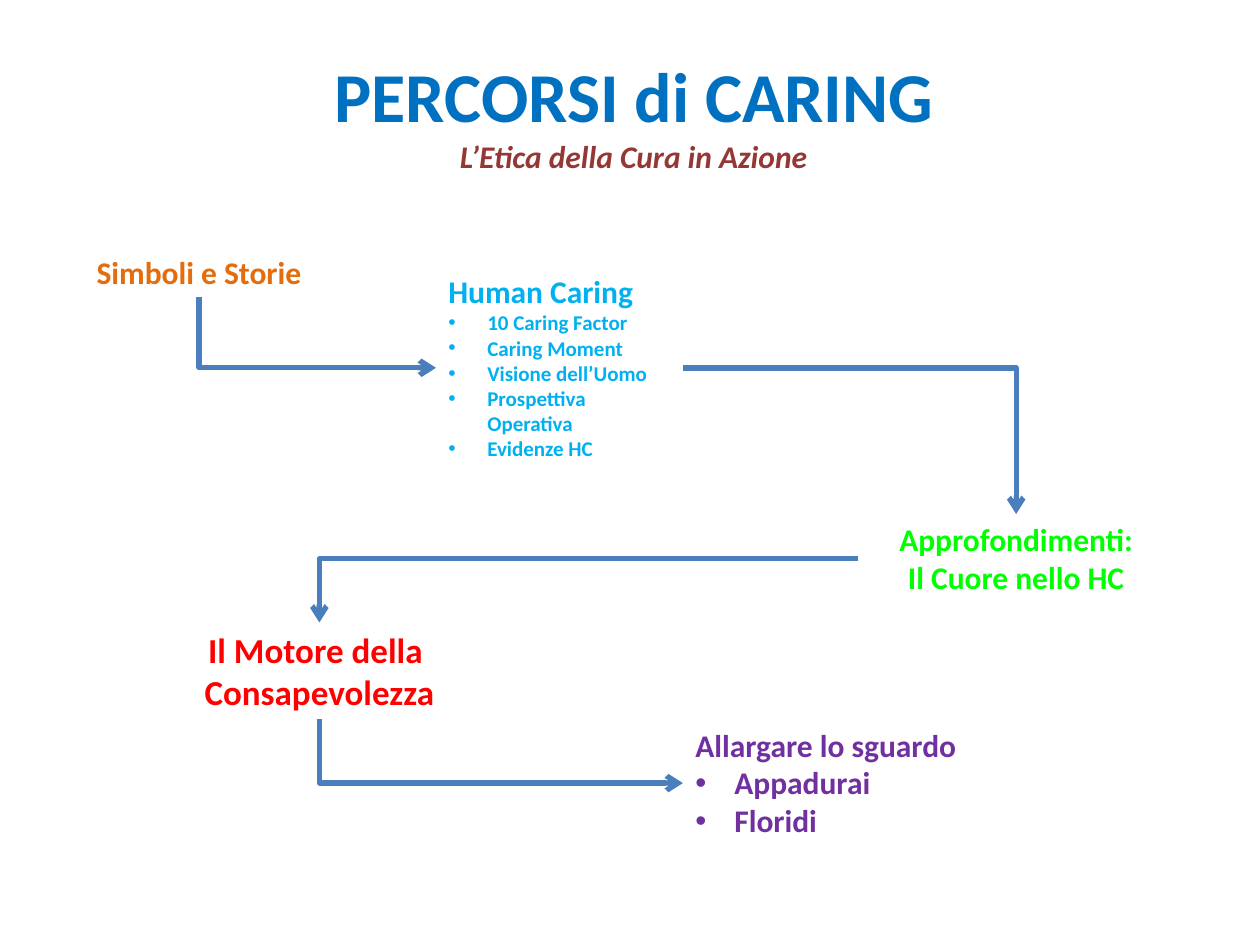
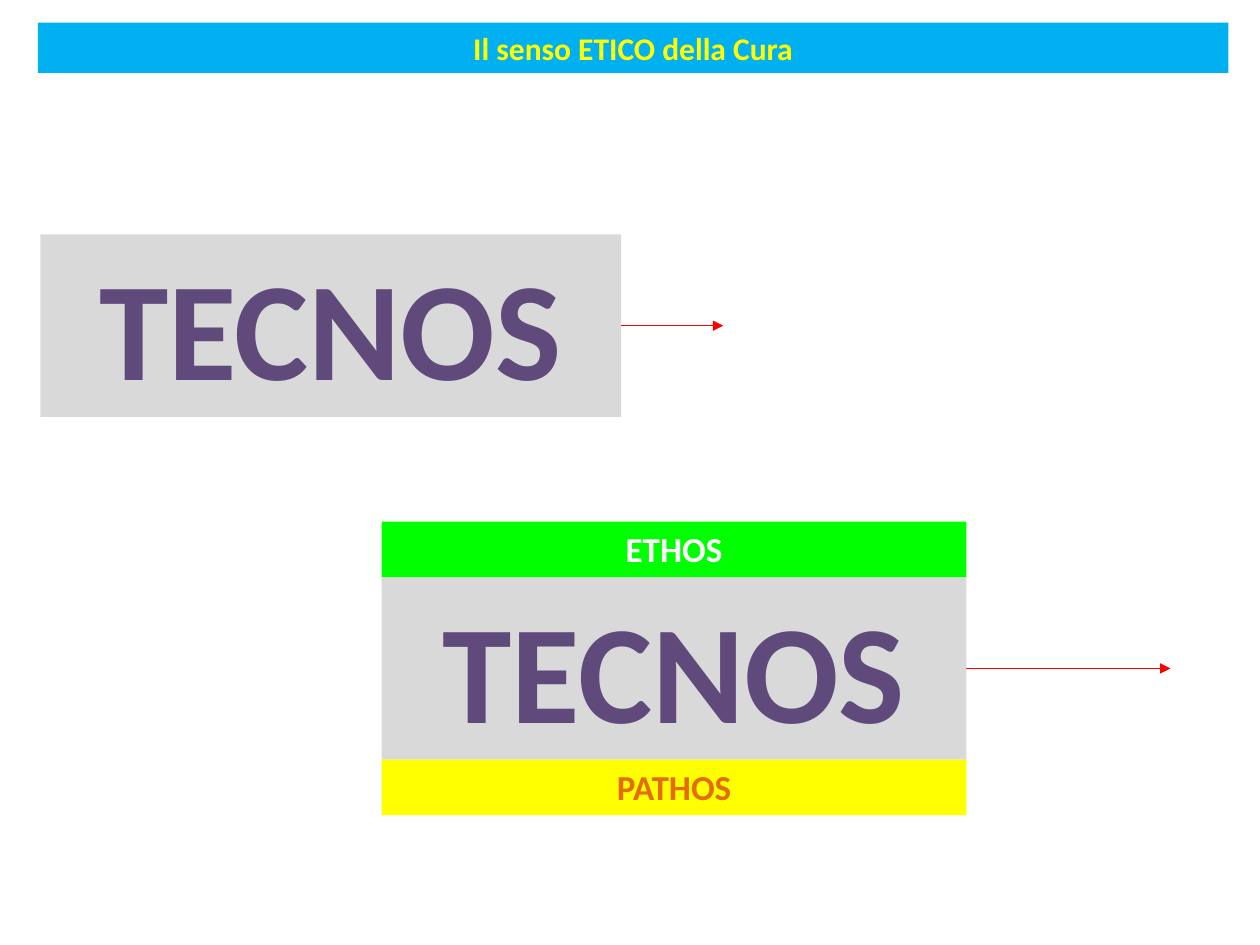
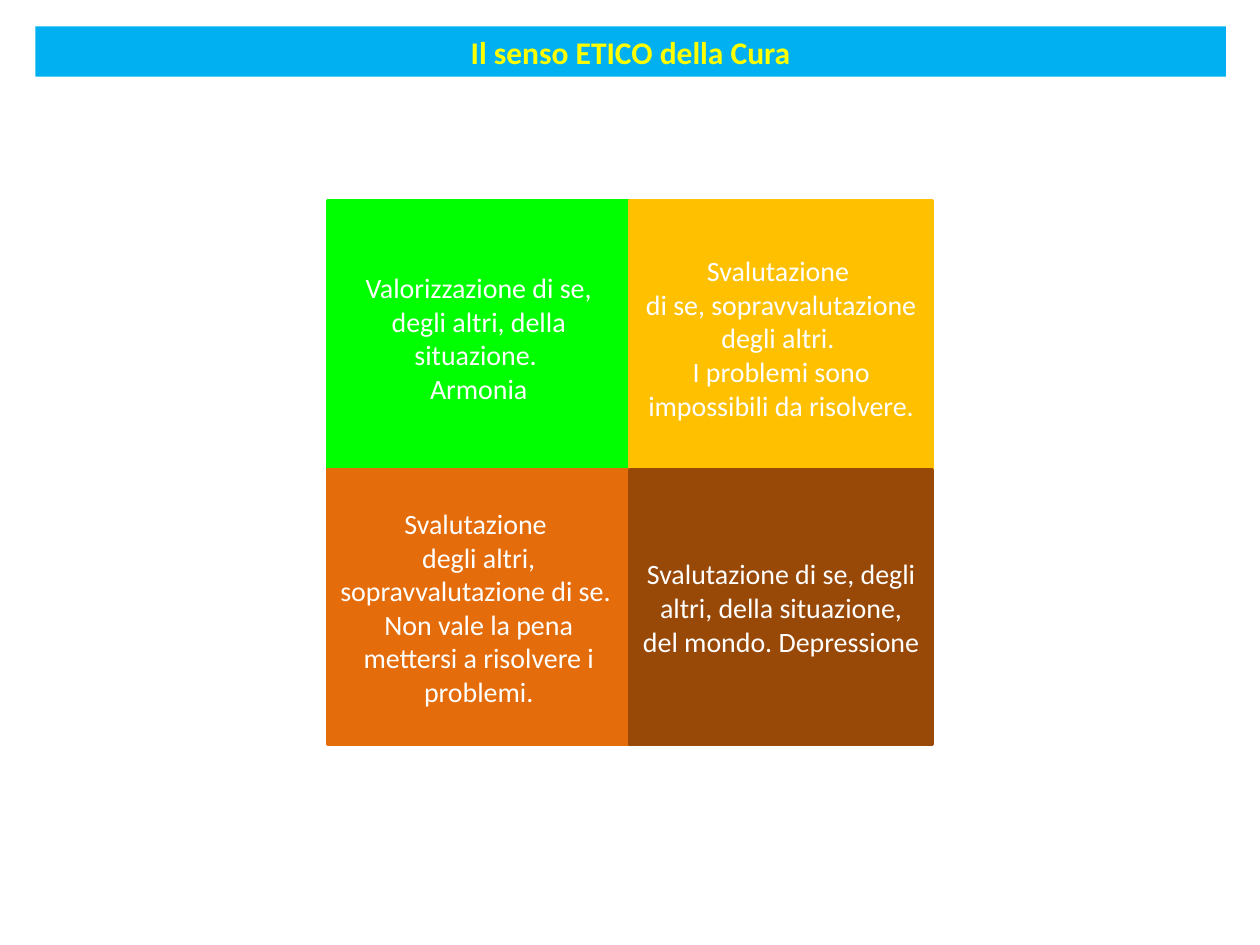
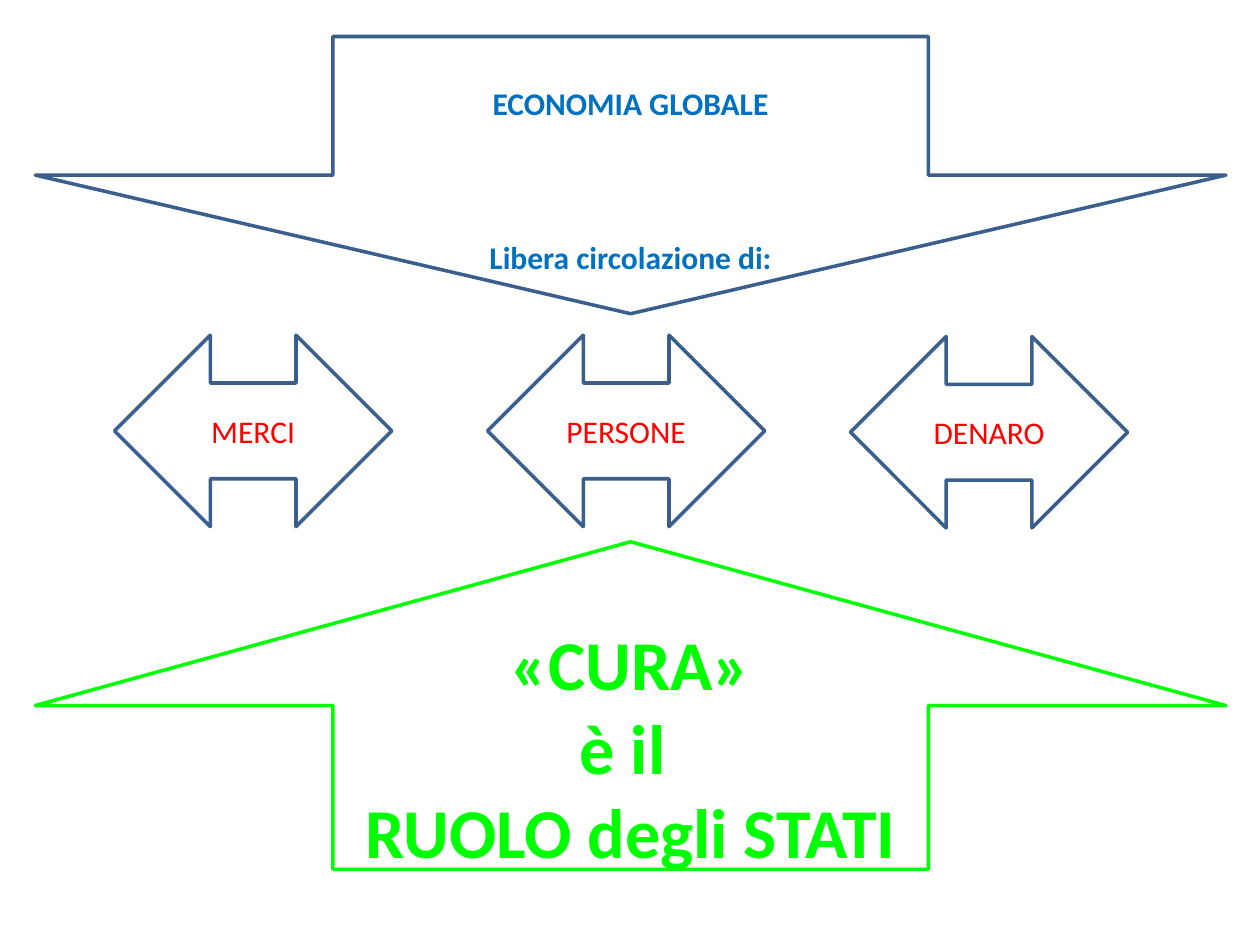
from lxml import etree
from pptx import Presentation
from pptx.dml.color import RGBColor
from pptx.enum.shapes import MSO_CONNECTOR, MSO_SHAPE
from pptx.enum.text import MSO_ANCHOR, MSO_AUTO_SIZE, PP_ALIGN
from pptx.oxml.ns import qn
from pptx.util import Inches, Pt

WIDTH, HEIGHT = 10, 7.5
FONT = "Calibri"
BLUE, SKY, GREEN, ORANGE = "0070C0", "00B0F0", "00FF00", "E46C0A"
RED, YELLOW, WHITE, GREY = "FF0000", "FFFF00", "FFFFFF", "D9D9D9"
PURPLE, VIOLET, MAROON, AMBER = "7030A0", "604A7B", "953735", "FFC000"
BROWN, STEEL, NAVY = "984807", "4B7EBC", "3A5F8C"
BULLET_INDENT = 0.31

LEFT, CENTER = PP_ALIGN.LEFT, PP_ALIGN.CENTER
TOP, MIDDLE = MSO_ANCHOR.TOP, MSO_ANCHOR.MIDDLE
RECTANGLE, EXCHANGE = MSO_SHAPE.RECTANGLE, MSO_SHAPE.LEFT_RIGHT_ARROW
DOWN_ARROW, UP_ARROW = MSO_SHAPE.DOWN_ARROW, MSO_SHAPE.UP_ARROW
STRAIGHT, ELBOW = MSO_CONNECTOR.STRAIGHT, MSO_CONNECTOR.ELBOW
SITE_TOP, SITE_LEFT, SITE_BOTTOM, SITE_RIGHT = range(4)

# A line is plain text, or text with what differs from the rest of its box.
TITLE_AT = (2.53, 0.37, 5, 1.08)
TITLE = ["PERCORSI di CARING",
         ("L’Etica della Cura in Azione", {"size": 18, "color": MAROON, "italic": True})]


def bulleted(texts, **changes):
    return [(text, {"bullet": True, **changes}) for text in texts]


# Steps of the path: place, colour, size, alignment, lines
STEPS = [
    ((0.63, 1.96, 1.9, 0.4), ORANGE, 18, CENTER, ["Simboli e Storie"]),
    ((3.46, 2.11, 1.96, 1.62), SKY, 18, LEFT, ["Human Caring"] + bulleted(
        ["10 Caring Factor", "Caring Moment", "Visione dell’Uomo",
         "Prospettiva Operativa", "Evidenze HC"], size=12)),
    ((6.81, 4.08, 2.51, 0.71), GREEN, 18, CENTER,
     ["Approfondimenti:", "Il Cuore nello HC"]),
    ((0.63, 4.94, 3.81, 0.77), RED, 20, CENTER,
     ["Il Motore della ", "Consapevolezza"]),
    ((5.42, 5.71, 2.38, 1.01), PURPLE, 18, LEFT,
     ["Allargare lo sguardo"] + bulleted(["Appadurai", "Floridi"])),
]
# Sides where each link leaves one step and reaches the next
LINK_SITES = [(SITE_BOTTOM, SITE_LEFT), (SITE_RIGHT, SITE_TOP),
              (SITE_LEFT, SITE_TOP), (SITE_BOTTOM, SITE_LEFT)]

BAND_TEXT = "Il senso ETICO della Cura"
BAND_SIZE = (9.45, 0.4)
TECNOS_HEIGHT, STRIP_HEIGHT = 1.45, 0.44
# Left, top, width, arrow length, strips above and below (text, fill, colour)
TECNOS_BLOCKS = [
    (3.03, 4.58, 4.64, 1.62, [("ETHOS", GREEN, WHITE), ("PATHOS", YELLOW, ORANGE)]),
    (0.32, 1.86, 4.61, 0.81, []),
]

QUADRANT_ORIGIN, QUADRANT_STEP, QUADRANT_SIZE = (2.6, 1.59), (2.4, 2.14), (2.4, 2.18)
QUADRANTS = [
    (GREEN, ["Valorizzazione di se, degli altri, della situazione. ", "Armonia"]),
    (AMBER, ["Svalutazione ", "di se, sopravvalutazione degli altri. ",
             "I problemi sono impossibili da risolvere."]),
    (ORANGE, ["Svalutazione ", "degli altri, sopravvalutazione di se. ",
              "Non vale la pena mettersi a risolvere i problemi."]),
    (BROWN, ["Svalutazione di se, degli altri, della situazione, "
             "del mondo. Depressione"]),
]

FLOW_SIZE = (2.2, 1.52)
FLOWS = [("MERCI", 0.91, 2.66), ("PERSONE", 3.87, 2.66), ("DENARO", 6.75, 2.67)]
ECONOMY = ["ECONOMIA GLOBALE", ("Libera circolazione di:", {"space": 66})]
STATES = ["«CURA»", "è il ", "RUOLO degli STATI"]


def rgb(color):
    return RGBColor.from_string(color)


def add_bullet(para):
    props = para._p.get_or_add_pPr()
    props.set("marL", str(Inches(BULLET_INDENT)))
    props.set("indent", str(-Inches(BULLET_INDENT)))
    etree.SubElement(props, qn("a:buFont")).set("typeface", "Arial")
    etree.SubElement(props, qn("a:buChar")).set("char", "•")


def write(box, lines, size, color, bold=True, align=CENTER, anchor=TOP, grow=True):
    frame = box.text_frame
    frame.word_wrap = True
    frame.vertical_anchor = anchor
    frame.auto_size = MSO_AUTO_SIZE.SHAPE_TO_FIT_TEXT if grow else MSO_AUTO_SIZE.NONE
    for index, line in enumerate(lines):
        text, changes = (line, {}) if isinstance(line, str) else line
        para = frame.paragraphs[0] if index == 0 else frame.add_paragraph()
        para.alignment = align
        if "space" in changes:
            para.space_before = Pt(changes["space"])
        if changes.get("bullet"):
            add_bullet(para)
        span = para.add_run()
        span.text = text
        font = span.font
        font.name = FONT
        font.size = Pt(changes.get("size", size))
        font.color.rgb = rgb(changes.get("color", color))
        font.bold = bold
        font.italic = changes.get("italic", False)


def add_text(page, place, lines, size, color, align=CENTER):
    box = page.shapes.add_textbox(*map(Inches, place))
    write(box, lines, size, color, align=align)
    return box


def add_block(shapes, kind, place, fill=None, line=None):
    block = shapes.add_shape(kind, *map(Inches, place))
    block.shadow.inherit = False
    if fill:
        block.fill.solid()
        block.fill.fore_color.rgb = rgb(fill)
    else:
        block.fill.background()
    if line:
        block.line.color.rgb = rgb(line)
        block.line.width = Pt(2)
    else:
        block.line.fill.background()
    return block


def style_line(connector, color, width, head):
    connector.line.color.rgb = rgb(color)
    connector.line.width = Pt(width)
    outline = connector.line._get_or_add_ln()
    etree.SubElement(outline, qn("a:tailEnd")).set("type", head)
    etree.SubElement(connector._element.spPr, qn("a:effectLst"))


def link(page, source, source_site, target, target_site):
    """Join two boxes with a one-bend arrow."""
    connector = page.shapes.add_connector(ELBOW, 0, 0, 0, 0)
    connector.begin_connect(source, source_site)
    connector.end_connect(target, target_site)
    props = connector._element.spPr
    props.find(qn("a:prstGeom")).set("prst", "bentConnector2")
    if source_site == SITE_BOTTOM:
        # The preset bends after a horizontal run: turn it to start downwards.
        across, down = connector.width, connector.height
        connector.left += (across - down) // 2
        connector.top += (down - across) // 2
        connector.width, connector.height = down, across
        frame = props.find(qn("a:xfrm"))
        frame.set("rot", str(270 * 60000))
        frame.set("flipH", "1")
    style_line(connector, STEEL, 3, "arrow")


def add_band(page, left, top):
    band = add_block(page.shapes, RECTANGLE, (left, top, *BAND_SIZE), SKY)
    write(band, [BAND_TEXT], 18, YELLOW)


def build_path(page):
    boxes = [add_text(page, place, lines, size, color, align)
             for place, color, size, align, lines in STEPS]
    add_text(page, TITLE_AT, TITLE, 40, BLUE)
    for source, target, (leave, reach) in zip(boxes, boxes[1:], LINK_SITES):
        link(page, source, leave, target, reach)


def build_tecnos(page):
    add_band(page, 0.3, 0.18)
    for left, top, width, reach, strips in TECNOS_BLOCKS:
        block = add_block(page.shapes, RECTANGLE, (left, top, width, TECNOS_HEIGHT), GREY)
        write(block, ["TECNOS"], 80, VIOLET)
        strip_tops = (top - STRIP_HEIGHT, top + TECNOS_HEIGHT)
        for strip_top, (text, fill, color) in zip(strip_tops, strips):
            strip = add_block(page.shapes, RECTANGLE,
                              (left, strip_top, width, STRIP_HEIGHT), fill)
            write(strip, [text], 20, color)
        start, level = left + width, top + TECNOS_HEIGHT / 2
        arrow = page.shapes.add_connector(
            STRAIGHT, *map(Inches, (start, level, start + reach, level)))
        arrow.begin_connect(block, SITE_RIGHT)
        style_line(arrow, RED, 0.75, "triangle")


def build_quadrants(page):
    add_band(page, 0.28, 0.21)
    group = page.shapes.add_group_shape()
    for index, (color, lines) in enumerate(QUADRANTS):
        row, column = divmod(index, 2)
        left = QUADRANT_ORIGIN[0] + column * QUADRANT_STEP[0]
        top = QUADRANT_ORIGIN[1] + row * QUADRANT_STEP[1]
        block = add_block(group.shapes, RECTANGLE, (left, top, *QUADRANT_SIZE), color, color)
        write(block, lines, 16, WHITE, bold=False, anchor=MIDDLE, grow=False)


def build_economy(page):
    for text, left, top in FLOWS:
        flow = add_block(page.shapes, EXCHANGE, (left, top, *FLOW_SIZE), line=NAVY)
        write(flow, [text], 18, RED, bold=False, anchor=MIDDLE, grow=False)
    economy = add_block(page.shapes, DOWN_ARROW, (0.28, 0.29, 9.45, 2.2), line=NAVY)
    write(economy, ECONOMY, 18, BLUE, grow=False)
    economy.text_frame.margin_top = Inches(0.38)
    economy.text_frame.margin_bottom = 0
    states = add_block(page.shapes, UP_ARROW, (0.28, 4.3, 9.45, 2.6), line=GREEN)
    write(states, STATES, 40, GREEN, anchor=MIDDLE, grow=False)


def main():
    deck = Presentation()
    deck.slide_width, deck.slide_height = Inches(WIDTH), Inches(HEIGHT)
    blank = deck.slide_layouts[6]
    for build in (build_path, build_tecnos, build_quadrants, build_economy):
        build(deck.slides.add_slide(blank))
    deck.save("out.pptx")


if __name__ == "__main__":
    main()
